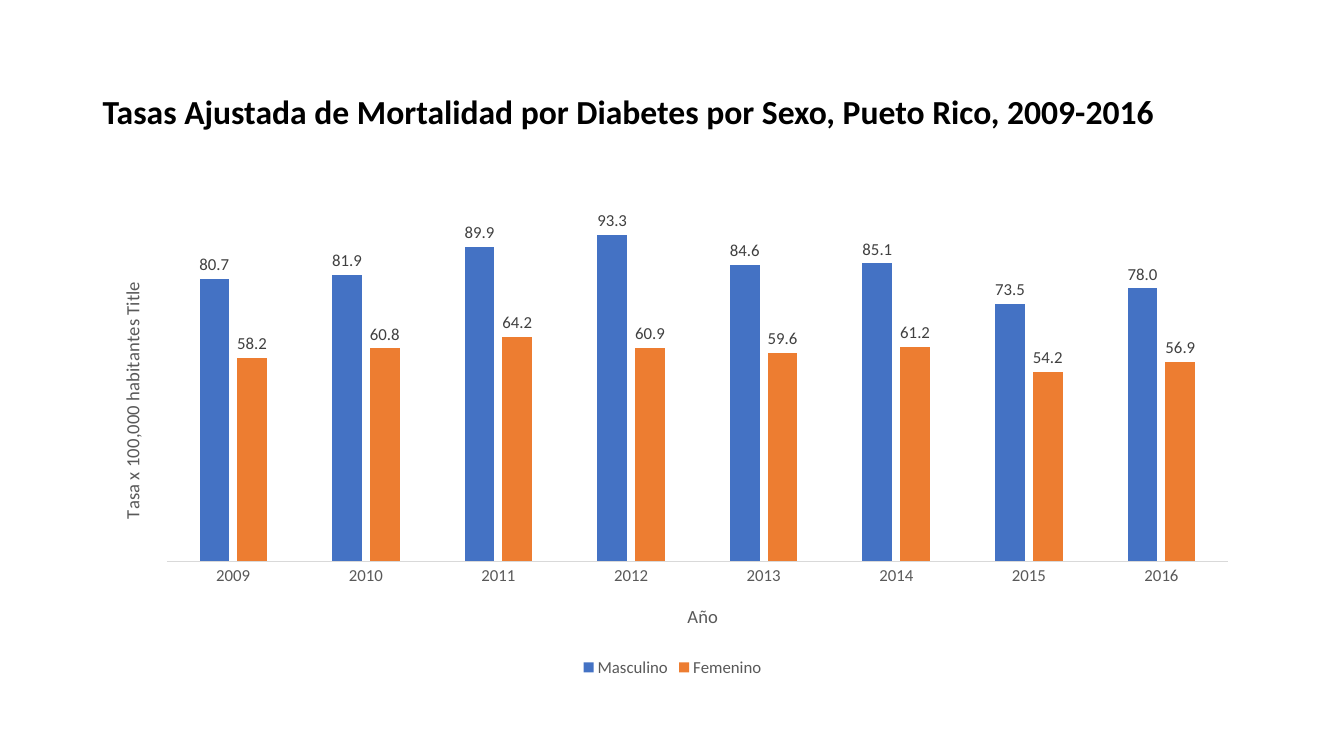
"""Build a slide charting diabetes mortality rates by sex in a clustered column chart."""
from dataclasses import dataclass

from lxml.etree import SubElement
from pptx import Presentation
from pptx.chart.axis import CategoryAxis, ValueAxis
from pptx.chart.chart import Chart
from pptx.chart.data import CategoryChartData
from pptx.chart.series import BarSeries
from pptx.dml.color import RGBColor
from pptx.enum.chart import (
    XL_CHART_TYPE, XL_LABEL_POSITION, XL_LEGEND_POSITION, XL_TICK_LABEL_POSITION, XL_TICK_MARK,
)
from pptx.enum.text import MSO_ANCHOR
from pptx.oxml.ns import qn
from pptx.oxml.xmlchemy import BaseOxmlElement
from pptx.slide import Slide
from pptx.text.text import Font
from pptx.util import Inches, Pt


@dataclass(frozen=True)
class Theme:
    """Typeface, colours and type sizes of the slide."""
    typeface: str = "Calibri"
    heading: str = "000000"
    axis_text: str = "595959"
    value_text: str = "404040"
    baseline: str = "D9D9D9"
    heading_size: float = 24
    axis_title_size: float = 13.3
    label_size: float = 12


@dataclass(frozen=True)
class SexRates:
    """Yearly mortality rates of one sex."""
    name: str
    color: str
    rates: tuple[float, ...]


@dataclass(frozen=True)
class Placement:
    """Position of a chart part as fractions of the chart area."""
    x: float
    y: float
    w: float | None = None
    h: float | None = None


THEME = Theme()
YEARS = [str(year) for year in range(2009, 2017)]
SEXES = (
    SexRates("Masculino", "4472C4", (80.7, 81.9, 89.9, 93.3, 84.6, 85.1, 73.5, 78)),
    SexRates("Femenino", "ED7D31", (58.2, 60.8, 64.2, 60.9, 59.6, 61.2, 54.2, 56.9)),
)
HEADING = "Tasas Ajustada de Mortalidad por Diabetes por Sexo, Pueto Rico, 2009-2016"
LEFT, WIDTH = Inches(0.92), Inches(11.5)


def style_font(font: Font, size: float, color: str, bold: bool = False) -> None:
    """Apply the theme typeface with a size, colour and weight."""
    font.name = THEME.typeface
    font.size = Pt(size)
    font.bold = bold
    font.color.rgb = RGBColor.from_string(color)


def place(part: BaseOxmlElement, placement: Placement, inner: bool = False) -> None:
    """Give a chart part a fixed position inside the chart area."""
    layout = part.find(qn("c:layout"))
    if layout is None:
        layout = SubElement(part, qn("c:layout"))
        part.insert(0, layout)
    manual = SubElement(layout, qn("c:manualLayout"))
    settings = {
        "layoutTarget": "inner" if inner else None,
        "xMode": "edge", "yMode": "edge",
        "x": placement.x, "y": placement.y, "w": placement.w, "h": placement.h,
    }
    for tag, setting in settings.items():
        if setting is not None:
            SubElement(manual, qn(f"c:{tag}")).set("val", str(setting))


def add_axis_title(
    axis: CategoryAxis | ValueAxis, wording: str, placement: Placement, upright: bool = False
) -> None:
    """Title an axis, turning the wording upwards when upright."""
    axis.has_title = True
    frame = axis.axis_title.text_frame
    frame.text = wording
    style_font(frame.paragraphs[0].runs[0].font, THEME.axis_title_size, THEME.axis_text)
    if upright:
        frame._txBody.bodyPr.set("rot", "-5400000")
        frame._txBody.bodyPr.set("vert", "horz")
    place(axis.axis_title._element, placement)


def add_heading(slide: Slide) -> None:
    """Write the heading above the chart."""
    frame = slide.shapes.add_textbox(LEFT, Inches(0.4), WIDTH, Inches(1.45)).text_frame
    frame.word_wrap = True
    frame.vertical_anchor = MSO_ANCHOR.MIDDLE
    frame.text = HEADING
    paragraph = frame.paragraphs[0]
    paragraph.line_spacing = 0.9
    style_font(paragraph.runs[0].font, THEME.heading_size, THEME.heading, bold=True)


def style_series(series: BarSeries, color: str) -> None:
    """Colour the columns of one sex and label their values."""
    series.format.fill.solid()
    series.format.fill.fore_color.rgb = RGBColor.from_string(color)
    series.invert_if_negative = False
    labels = series.data_labels
    labels.show_value = True
    labels.position = XL_LABEL_POSITION.OUTSIDE_END
    labels.number_format = "0.0"
    labels.number_format_is_linked = False
    style_font(labels.font, THEME.label_size, THEME.value_text)


def style_axes(chart: Chart) -> None:
    """Show the years on a thin baseline and hide the rate scale."""
    years = chart.category_axis
    years.major_tick_mark = years.minor_tick_mark = XL_TICK_MARK.NONE
    years.tick_label_position = XL_TICK_LABEL_POSITION.NEXT_TO_AXIS
    years.format.line.color.rgb = RGBColor.from_string(THEME.baseline)
    years.format.line.width = Pt(0.75)
    style_font(years.tick_labels.font, THEME.label_size, THEME.axis_text)
    add_axis_title(years, "Año", Placement(0.51, 0.83))

    rates = chart.value_axis
    rates.minimum_scale, rates.maximum_scale = 0, 100
    rates.has_major_gridlines = False
    rates.visible = False
    add_axis_title(rates, "Tasa x 100,000 habitantes Title", Placement(0.02, 0.16), upright=True)


def add_rates_chart(slide: Slide) -> None:
    """Draw the rates of both sexes as clustered columns."""
    table = CategoryChartData(number_format="0.0")
    table.categories = YEARS
    for sex in SEXES:
        table.add_series(sex.name, sex.rates)
    chart = slide.shapes.add_chart(
        XL_CHART_TYPE.COLUMN_CLUSTERED, LEFT, Inches(2), WIDTH, Inches(4.76), table
    ).chart
    chart.has_title = False
    style_font(chart.font, 10, THEME.heading)
    columns = chart.plots[0]
    columns.gap_width, columns.overlap = 219, -27
    columns.vary_by_categories = False
    for series, sex in zip(columns.series, SEXES):
        style_series(series, sex.color)
    style_axes(chart)
    chart.has_legend = True
    chart.legend.position = XL_LEGEND_POSITION.BOTTOM
    chart.legend.include_in_layout = False
    style_font(chart.legend.font, THEME.label_size, THEME.axis_text)
    place(chart._chartSpace.chart.plotArea, Placement(0.064, 0.02, 0.915, 0.73), inner=True)


def main() -> None:
    """Create the presentation and save it."""
    presentation = Presentation()
    presentation.slide_width, presentation.slide_height = Inches(13.33), Inches(7.5)
    slide = presentation.slides.add_slide(presentation.slide_layouts[6])
    add_heading(slide)
    add_rates_chart(slide)
    presentation.save("out.pptx")


if __name__ == "__main__":
    main()
